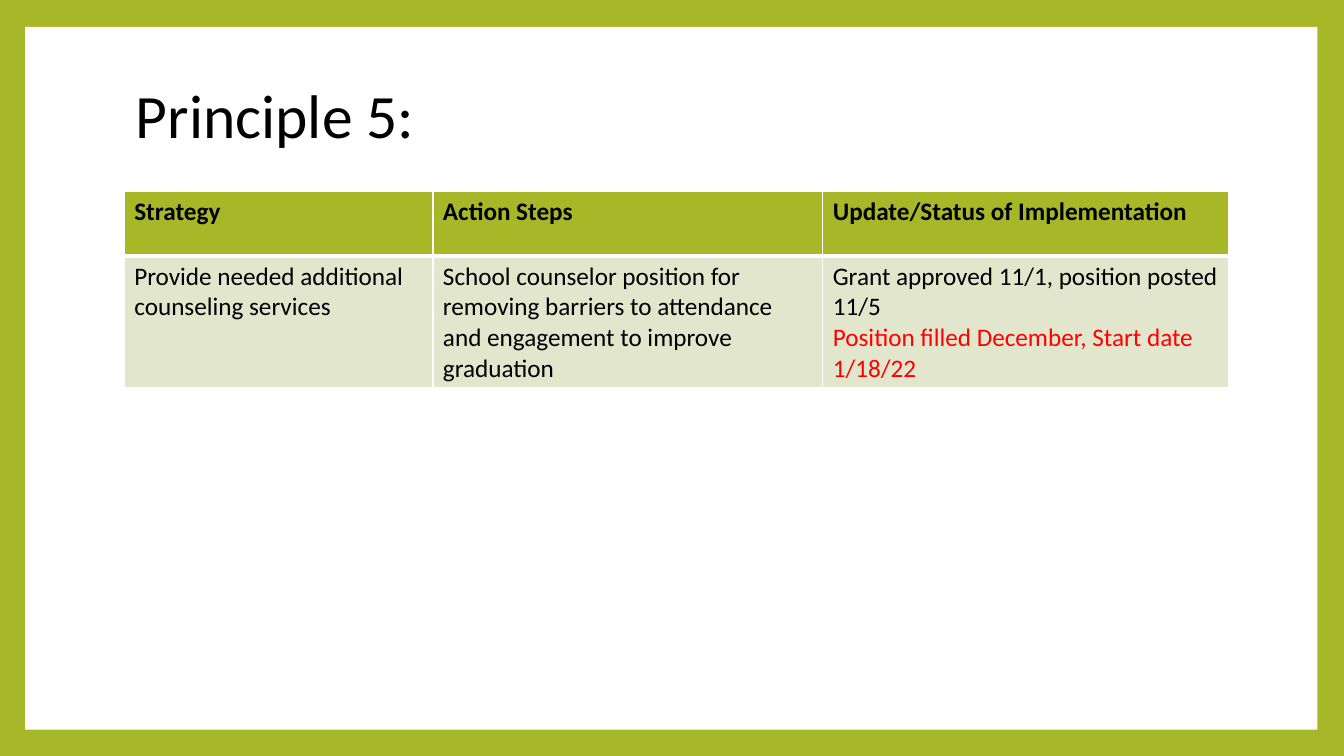
from lxml.etree import SubElement
from pptx import Presentation
from pptx.dml.color import RGBColor
from pptx.enum.shapes import MSO_SHAPE
from pptx.enum.text import MSO_ANCHOR
from pptx.oxml.ns import qn
from pptx.util import Pt

GREEN, PALE, WHITE, BLACK, RED = "A6B727", "E1E6CD", "FFFFFF", "000000", "FF0000"
COLUMN_WIDTHS = [220.5, 278.5, 290]
ROW_HEIGHTS = [46, 93.5]
HEADINGS = ["Strategy", "Action Steps", "Update/Status of Implementation"]
STRATEGY = [
    [("Provide needed additional counseling services", BLACK)],
    [("School counselor position for removing barriers to attendance "
      "and engagement to improve graduation", BLACK)],
    [("Grant approved 11/1, position posted 11/5", BLACK),
     ("Position filled December, Start date 1/18/22", RED)],
]


def paint(fill, color):
    fill.solid()
    fill.fore_color.rgb = RGBColor.from_string(color)


def style(para, size, color, bold=False):
    font = para.font
    for span in para.runs:
        font = span.font
        font.name = "Calibri"
        font.size = Pt(size)
        font.bold = bold
        font.color.rgb = RGBColor.from_string(color)


def add_frame(page, left, top, width, height):
    """Green background showing as a border around a white panel."""
    paint(page.background.fill, GREEN)
    panel = page.shapes.add_shape(
        MSO_SHAPE.RECTANGLE, Pt(left), Pt(top), Pt(width), Pt(height))
    panel.shadow.inherit = False
    paint(panel.fill, WHITE)
    panel.line.fill.background()


def add_title(page, text, left, top, width, height):
    box = page.shapes.add_textbox(Pt(left), Pt(top), Pt(width), Pt(height))
    frame = box.text_frame
    frame.word_wrap = True
    frame.vertical_anchor = MSO_ANCHOR.MIDDLE
    frame.text = text
    para = frame.paragraphs[0]
    para.line_spacing = 0.9
    style(para, 44, BLACK)


def add_borders(cell, top, bottom):
    """White borders, one point at the sides; must precede the cell's fill."""
    properties = cell._tc.get_or_add_tcPr()
    for side, points in (("L", 1), ("R", 1), ("T", top), ("B", bottom)):
        line = SubElement(properties, qn(f"a:ln{side}"), w=str(Pt(points)))
        solid = SubElement(line, qn("a:solidFill"))
        SubElement(solid, qn("a:srgbClr"), val=WHITE)


def fill_cell(cell, lines, color, bold, top, bottom):
    add_borders(cell, top, bottom)
    paint(cell.fill, color)
    cell.text_frame.text = "\n".join(text for text, _ in lines)
    for para, (_, text_color) in zip(cell.text_frame.paragraphs, lines):
        style(para, 18, text_color, bold)


def add_strategy_table(page, left, top):
    table = page.shapes.add_table(
        len(ROW_HEIGHTS), len(COLUMN_WIDTHS), Pt(left), Pt(top),
        Pt(sum(COLUMN_WIDTHS)), Pt(sum(ROW_HEIGHTS))).table
    table.first_row = table.horz_banding = False
    for column, width in zip(table.columns, COLUMN_WIDTHS):
        column.width = Pt(width)
    for row, height in zip(table.rows, ROW_HEIGHTS):
        row.height = Pt(height)
    for index, (heading, lines) in enumerate(zip(HEADINGS, STRATEGY)):
        fill_cell(table.cell(0, index), [(heading, BLACK)], GREEN, True, 1, 3)
        fill_cell(table.cell(1, index), lines, PALE, False, 3, 1)


def main():
    deck = Presentation()
    deck.slide_width, deck.slide_height = Pt(960), Pt(540)
    page = deck.slides.add_slide(deck.slide_layouts[6])
    add_frame(page, 18, 19.25, 923, 502)
    add_title(page, "Principle 5:", 90, 31.5, 777.5, 106.5)
    add_strategy_table(page, 88.75, 137)
    deck.save("out.pptx")


if __name__ == "__main__":
    main()
